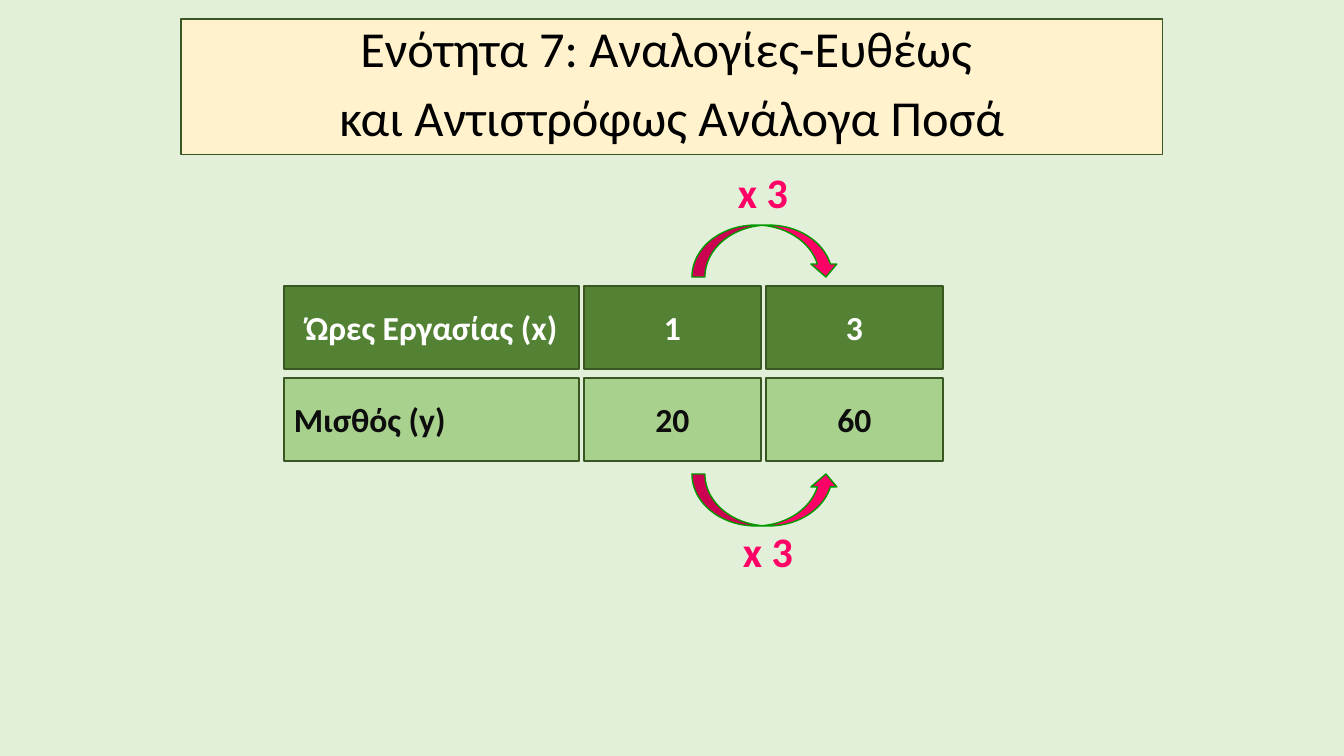
from dataclasses import dataclass

from pptx import Presentation
from pptx.dml.color import RGBColor
from pptx.enum.shapes import MSO_SHAPE
from pptx.enum.text import MSO_ANCHOR, MSO_AUTO_SIZE, PP_ALIGN
from pptx.util import Emu, Pt

RECTANGLE = MSO_SHAPE.RECTANGLE
CURVED_ARROW = MSO_SHAPE.CURVED_UP_ARROW
LEFT, CENTER = PP_ALIGN.LEFT, PP_ALIGN.CENTER
TOP, MIDDLE = MSO_ANCHOR.TOP, MSO_ANCHOR.MIDDLE
GROW = MSO_AUTO_SIZE.SHAPE_TO_FIT_TEXT
NO_FIT = MSO_AUTO_SIZE.NONE
TITLE_ONLY = 5
EMU_PER_PX = 914400 / 100.8


@dataclass(frozen=True)
class Theme:
    font: str = "Calibri"
    background: str = "E2F0D9"
    title_fill: str = "FFF2CC"
    title_text: str = "000000"
    border: str = "385723"
    hours_fill: str = "548235"
    hours_text: str = "FFFFFF"
    wage_fill: str = "A9D18E"
    wage_text: str = "0D0D0D"
    factor: str = "FF0066"
    arrow_border: str = "009900"
    title_size: int = 36
    cell_size: int = 24
    factor_size: int = 30


def px(length):
    return Emu(round(length * EMU_PER_PX))


class SlideBuilder:
    def __init__(self, slide, theme):
        self.slide = slide
        self.theme = theme
        self.paint(slide.background, theme.background)

    def paint(self, target, fill, border=None, weight=1):
        target.fill.solid()
        target.fill.fore_color.rgb = RGBColor.from_string(fill)
        if border:
            target.line.color.rgb = RGBColor.from_string(border)
            target.line.width = Pt(weight)

    def style(self, paragraph, size, color, align, bold=True):
        paragraph.alignment = align
        font = paragraph.font
        font.name, font.size, font.bold = self.theme.font, Pt(size), bold
        font.color.rgb = RGBColor.from_string(color)

    def title(self, lines, left, top, width, height):
        heading = self.slide.shapes.title
        heading.left, heading.top = px(left), px(top)
        heading.width, heading.height = px(width), px(height)
        self.paint(heading, self.theme.title_fill, self.theme.border, 0.75)
        frame = heading.text_frame
        frame.text = "\n".join(lines)
        frame.vertical_anchor = TOP
        frame.auto_size = NO_FIT
        for paragraph in frame.paragraphs:
            self.style(paragraph, self.theme.title_size, self.theme.title_text, CENTER, False)
            paragraph.line_spacing = 0.9
            paragraph.space_before = Pt(10)

    def shape(self, preset, left, top, width, height, fill, border):
        figure = self.slide.shapes.add_shape(preset, px(left), px(top), px(width), px(height))
        figure.shadow.inherit = False
        self.paint(figure, fill, border)
        return figure

    def cell(self, text, left, top, width, height, fill, color, align):
        box = self.shape(RECTANGLE, left, top, width, height, fill, self.theme.border)
        frame = box.text_frame
        frame.text = text
        frame.word_wrap = True
        frame.vertical_anchor = MIDDLE
        self.style(frame.paragraphs[0], self.theme.cell_size, color, align)

    def factor(self, text, left, top, width, height):
        frame = self.slide.shapes.add_textbox(px(left), px(top), px(width), px(height)).text_frame
        frame.text = text
        frame.word_wrap = True
        frame.auto_size = GROW
        self.style(frame.paragraphs[0], self.theme.factor_size, self.theme.factor, LEFT)

    def arrow(self, left, top, width, height, over=False):
        """Draw an arrow curving left to right, below the cells or over them."""
        curve = self.shape(CURVED_ARROW, left, top, width, height,
                           self.theme.factor, self.theme.arrow_border)
        if over:
            curve.rotation = 180
            curve._element.spPr.xfrm.set("flipH", "1")


def main():
    presentation = Presentation()
    presentation.slide_width, presentation.slide_height = px(1344), px(756)
    slide = presentation.slides.add_slide(presentation.slide_layouts[TITLE_ONLY])
    theme = Theme()
    builder = SlideBuilder(slide, theme)

    builder.title(["Ενότητα 7: Αναλογίες-Ευθέως ", "και Αντιστρόφως Ανάλογα Ποσά"],
                  181, 19, 982, 136)

    rows = [
        (["Ώρες Εργασίας (x)", "1", "3"], theme.hours_fill, theme.hours_text, CENTER),
        (["Μισθός (y)", "20", "60"], theme.wage_fill, theme.wage_text, LEFT),
    ]
    column_widths, column_gap = [295, 177, 177], 5
    row_height, row_gap = 83, 9
    top = 286
    for values, fill, color, label_align in rows:
        left = 284
        for column, (value, width) in enumerate(zip(values, column_widths)):
            align = CENTER if column else label_align
            builder.cell(value, left, top, width, row_height, fill, color, align)
            left += width + column_gap
        top += row_height + row_gap

    for arrow_top, factor_left, factor_top, over in [(225, 728, 162, True),
                                                     (474, 733, 521, False)]:
        builder.arrow(692, arrow_top, 147, 52, over)
        builder.factor("x 3", factor_left, factor_top, 79, 61)

    presentation.save("out.pptx")


if __name__ == "__main__":
    main()
